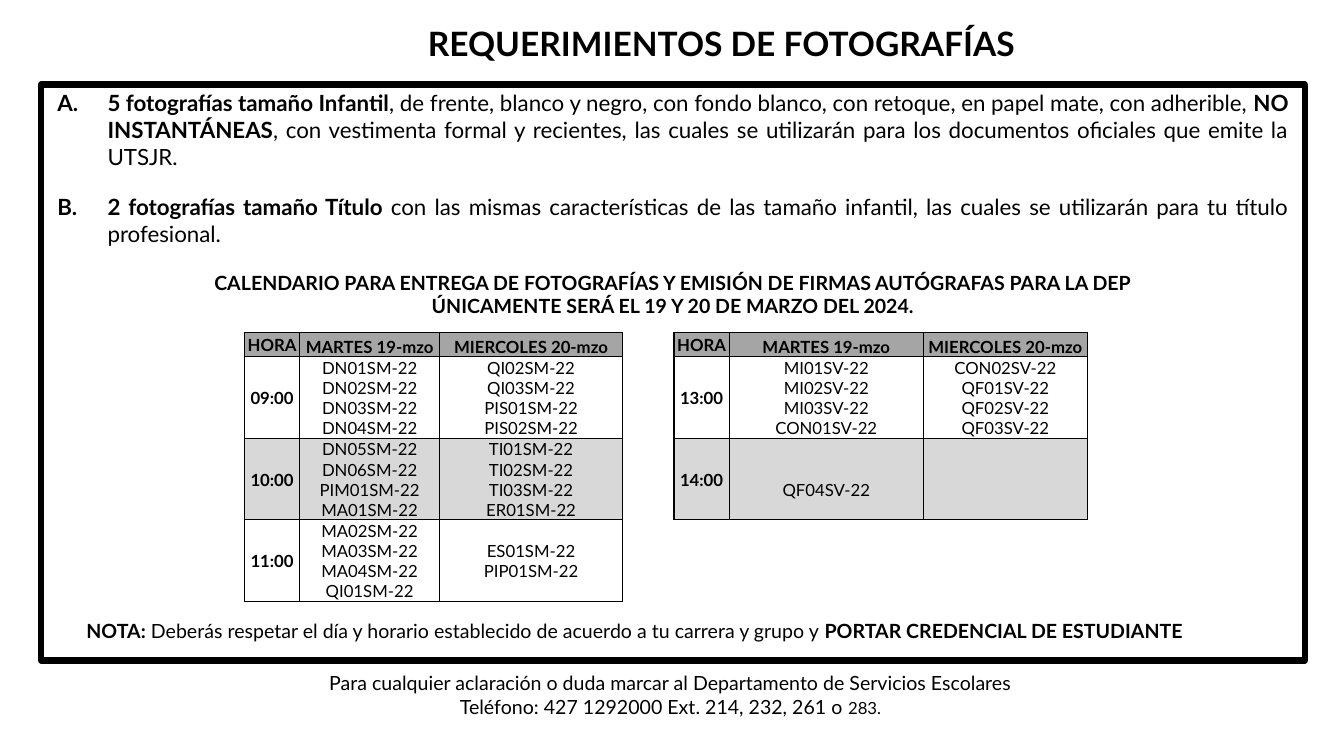
import pptx
import pptx.util
import pptx.dml.color
import pptx.enum.shapes
import pptx.enum.text
import pptx.oxml
import pptx.oxml.ns
from lxml import etree

Inches = pptx.util.Inches
Pt = pptx.util.Pt
RGBColor = pptx.dml.color.RGBColor
ALIGN = pptx.enum.text.PP_ALIGN
ANCHOR = pptx.enum.text.MSO_ANCHOR
qn = pptx.oxml.ns.qn

FONT = "Lato"
BLACK = RGBColor(0x00, 0x00, 0x00)
HEADER_GRAY = RGBColor(0xA5, 0xA5, 0xA5)
BAND_GRAY = RGBColor(0xD8, 0xD8, 0xD8)
NO_STYLE = "{2D5ABB26-0587-4C30-8999-92F81FD0307C}"

# Content: a paragraph is a list of (text, size, bold)
TITLE = [[("REQUERIMIENTOS DE FOTOGRAFÍAS", 24, True)]]
REQUIREMENTS = [
    [("5 fotografías tamaño Infantil", 16, True),
     (", de frente, blanco y negro, con fondo blanco, con retoque, en papel mate, "
      "con adherible, ", 16, False),
     ("NO INSTANTÁNEAS", 16, True),
     (", con vestimenta formal y recientes, las cuales se utilizarán para los "
      "documentos oficiales que emite la UTSJR.", 16, False)],
    [("2 fotografías tamaño Título ", 16, True),
     ("con las mismas características de las tamaño infantil, las cuales se "
      "utilizarán para tu título profesional.", 16, False)],
]
CALENDAR = [
    [("CALENDARIO PARA ENTREGA DE FOTOGRAFÍAS Y EMISIÓN DE FIRMAS AUTÓGRAFAS "
      "PARA LA DEP", 14, True)],
    [("ÚNICAMENTE SERÁ EL 19 Y 20 DE MARZO DEL 2024.", 14, True)],
]
CONTACT = [
    [("Para cualquier aclaración o duda marcar al Departamento de Servicios "
      "Escolares", 14, False)],
    [("Teléfono: 427 1292000 Ext. 214, 232, 261 o ", 14, False),
     ("283.", 12, False)],
]
NOTE = [[("NOTA:", 14, True),
         (" Deberás respetar el día y horario establecido de acuerdo a tu carrera "
          "y grupo y ", 14, False),
         ("PORTAR CREDENCIAL DE ESTUDIANTE", 14, True)]]

HEADINGS = ["HORA", "MARTES 19-mzo", "MIERCOLES 20-mzo"]
MORNING = [
    HEADINGS,
    ["09:00", "DN01SM-22 DN02SM-22 DN03SM-22 DN04SM-22",
     "QI02SM-22 QI03SM-22 PIS01SM-22 PIS02SM-22"],
    ["10:00", "DN05SM-22 DN06SM-22 PIM01SM-22 MA01SM-22",
     "TI01SM-22 TI02SM-22 TI03SM-22 ER01SM-22"],
    ["11:00", "MA02SM-22 MA03SM-22 MA04SM-22 QI01SM-22", "ES01SM-22 PIP01SM-22"],
]
AFTERNOON = [
    HEADINGS,
    ["13:00", "MI01SV-22 MI02SV-22 MI03SV-22 CON01SV-22",
     "CON02SV-22 QF01SV-22 QF02SV-22 QF03SV-22"],
    ["14:00", "QF04SV-22", ""],
]
COLUMNS = [0.55, 1.39, 1.82, 0.51, 0.55, 1.93, 1.63]
ROWS = [0.24, 0.81, 0.81, 0.81]
ROW_FILLS = [HEADER_GRAY, None, BAND_GRAY, None]


def write(frame, paragraphs, align=ALIGN.CENTER):
    """Fill a text frame and return its paragraphs."""
    frame.word_wrap = True
    for index, spans in enumerate(paragraphs):
        para = frame.paragraphs[0] if index == 0 else frame.add_paragraph()
        para.alignment = align
        for text, size, bold in spans:
            span = para.add_run()
            span.text = text
            span.font.name = FONT
            span.font.size = Pt(size)
            span.font.bold = bold
            span.font.color.rgb = BLACK
    return frame.paragraphs


def add_text(page, place, paragraphs):
    box = page.shapes.add_textbox(*map(Inches, place))
    write(box.text_frame, paragraphs)
    return box.text_frame


def add_frame(page):
    box = page.shapes.add_shape(pptx.enum.shapes.MSO_SHAPE.RECTANGLE,
                                *map(Inches, (0.41, 0.84, 12.56, 5.73)))
    box.shadow.inherit = False
    box.fill.background()
    box.line.color.rgb = BLACK
    box.line.width = Pt(4.5)
    frame = box.text_frame
    frame.vertical_anchor = ANCHOR.TOP
    frame.margin_left = frame.margin_right = Inches(0.16)
    paras = write(frame, REQUIREMENTS + CALENDAR)
    for para in paras[:len(REQUIREMENTS)]:
        para.alignment = ALIGN.JUSTIFY
        props = para._p.get_or_add_pPr()
        props.set("marL", str(Inches(0.5)))
        props.set("indent", str(-Inches(0.5)))
    for start, para in enumerate(paras[:len(REQUIREMENTS)], 1):
        etree.SubElement(para._p.get_or_add_pPr(), qn("a:buAutoNum"),
                         type="alphaUcPeriod", startAt=str(start))
    for para in paras[1:len(REQUIREMENTS) + 1]:
        para.space_before = Pt(17)


def draw_borders(cell):
    props = cell._tc.get_or_add_tcPr()
    for index, side in enumerate(("a:lnL", "a:lnR", "a:lnT", "a:lnB")):
        line = etree.Element(qn(side), w=str(Pt(1)))
        fill = etree.SubElement(line, qn("a:solidFill"))
        etree.SubElement(fill, qn("a:srgbClr"), val=str(BLACK))
        props.insert(index, line)


def fill_schedule(table, first_column, schedule):
    for r, row in enumerate(schedule):
        for c, text in enumerate(row):
            cell = table.cell(r, first_column + c)
            is_label = r == 0 or c == 0
            lines = [text] if is_label else text.split()
            write(cell.text_frame, [[(line, 12, is_label)] for line in lines])
            cell.vertical_anchor = ANCHOR.MIDDLE if c == 0 else ANCHOR.BOTTOM
            # Short lists sit one line above the cell's foot
            if not is_label and len(lines) < 4:
                cell.margin_bottom = Inches(0.2)
            if ROW_FILLS[r] is not None:
                cell.fill.solid()
                cell.fill.fore_color.rgb = ROW_FILLS[r]
            draw_borders(cell)


def add_schedules(page):
    shape = page.shapes.add_table(len(ROWS), len(COLUMNS), Inches(2.43), Inches(3.31),
                                  Inches(sum(COLUMNS)), Inches(sum(ROWS)))
    table = shape.table
    table.first_row = table.horz_banding = False
    table._tbl.tblPr.find(qn("a:tableStyleId")).text = NO_STYLE
    for column, width in zip(table.columns, COLUMNS):
        column.width = Inches(width)
    for row, height in zip(table.rows, ROWS):
        row.height = Inches(height)
    for cell in table.iter_cells():
        cell.margin_left = cell.margin_right = cell.margin_top = Inches(0.01)
        cell.margin_bottom = 0
        cell.fill.background()
    fill_schedule(table, 0, MORNING)
    fill_schedule(table, 4, AFTERNOON)
    # Empty cells keep the small text height
    for cell in table.iter_cells():
        if not cell.text_frame.text:
            etree.SubElement(cell.text_frame.paragraphs[0]._p,
                             qn("a:endParaRPr"), sz="1200")


def main():
    deck = pptx.Presentation()
    deck.slide_width = Inches(13.36)
    deck.slide_height = Inches(7.5)
    page = deck.slides.add_slide(deck.slide_layouts[6])

    add_frame(page)
    title = add_text(page, (3.79, 0, 6.76, 0.93), TITLE)
    title.margin_top = Inches(0.23)
    add_schedules(page)
    add_text(page, (1.49, 6.63, 10.35, 0.57), CONTACT)
    add_text(page, (0.26, 6.11, 12.1, 0.34), NOTE)

    deck.save("out.pptx")


if __name__ == "__main__":
    main()
